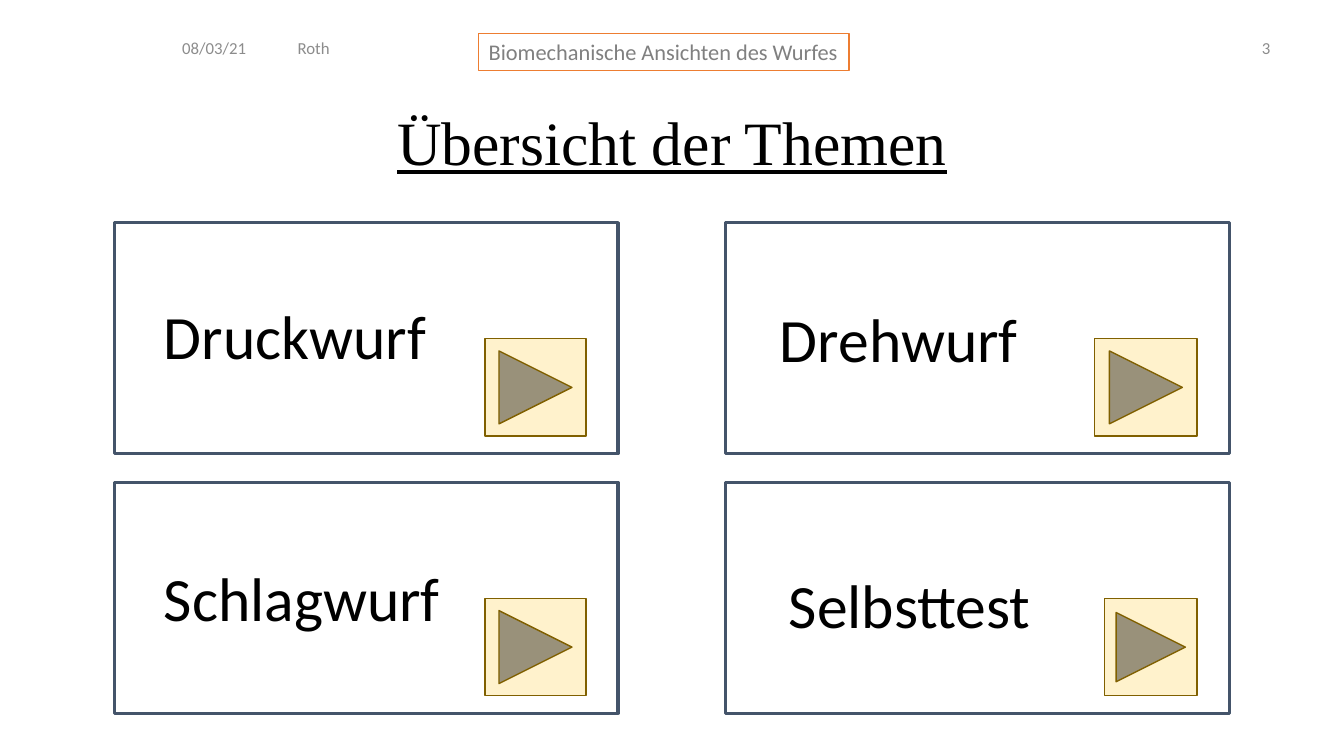
from typing import NamedTuple

from pptx import Presentation
from pptx.dml.color import RGBColor
from pptx.enum.shapes import MSO_SHAPE
from pptx.enum.text import MSO_ANCHOR, PP_ALIGN
from pptx.util import Pt


class Area(NamedTuple):
    left: float
    top: float
    width: float
    height: float


class Topic(NamedTuple):
    name: str
    column: int
    row: int
    label_left: float
    label_top: float
    button_width: float


def color(value: str) -> RGBColor:
    return RGBColor.from_string(value)


def write(box, text: str, *, size: float, ink: str = "000000", font: str = "Calibri",
          align=PP_ALIGN.LEFT, anchor=MSO_ANCHOR.TOP, underline: bool = False,
          spacing: float = 1.0) -> None:
    frame = box.text_frame
    frame.word_wrap = True
    frame.vertical_anchor = anchor
    para = frame.paragraphs[0]
    para.alignment = align
    para.line_spacing = spacing
    span = para.add_run()
    span.text = text
    span.font.size = Pt(size)
    span.font.name = font
    span.font.underline = underline
    span.font.color.rgb = color(ink)


def add_text(page, area: Area, text: str, **style) -> None:
    write(page.shapes.add_textbox(*map(Pt, area)), text, **style)


def add_box(page, kind, area: Area, line: str, weight: float, fill: str = ""):
    box = page.shapes.add_shape(kind, *map(Pt, area))
    box.shadow.inherit = False
    if fill:
        box.fill.solid()
        box.fill.fore_color.rgb = color(fill)
    else:
        box.fill.background()
    box.line.color.rgb = color(line)
    box.line.width = Pt(weight)
    return box


CARD = Area(82, 159, 359.5, 165)
COLUMN_STEP, ROW_STEP = 436.5, 185.5
BUTTON_RIGHT, BUTTON_TOP, BUTTON_HEIGHT = 336.5, 83, 69.5

TOPICS = [
    Topic("Druckwurf", 0, 0, 110, 209.5, 72),
    Topic("Drehwurf", 1, 0, 550, 211.5, 73),
    Topic("Schlagwurf", 0, 1, 110, 396.5, 72),
    Topic("Selbsttest", 1, 1, 556.5, 401.5, 66),
]


def add_topic(page, topic: Topic) -> None:
    left = CARD.left + topic.column * COLUMN_STEP
    top = CARD.top + topic.row * ROW_STEP
    add_box(page, MSO_SHAPE.RECTANGLE, Area(left, top, CARD.width, CARD.height),
            "44546A", 2.25)
    add_text(page, Area(topic.label_left, topic.label_top, 224, 60.5), topic.name, size=44)
    button = Area(left + BUTTON_RIGHT - topic.button_width, top + BUTTON_TOP,
                  topic.button_width, BUTTON_HEIGHT)
    add_box(page, MSO_SHAPE.ACTION_BUTTON_FORWARD_OR_NEXT, button, "806000", 1, "FFF2CC")


def main() -> None:
    deck = Presentation()
    deck.slide_width, deck.slide_height = Pt(960), Pt(540)
    page = deck.slides.add_slide(deck.slide_layouts[6])

    # Header line
    banner = add_box(page, MSO_SHAPE.RECTANGLE, Area(342, 24, 264.5, 26.5),
                     "ED7D31", 1, "FFFFFF")
    write(banner, "Biomechanische Ansichten des Wurfes", size=16, ink="808080")
    for text, left, width, align in [
        ("08/03/21", 123, 82.5, PP_ALIGN.LEFT),
        ("Roth", 205.5, 118.5, PP_ALIGN.LEFT),
        ("3", 698.5, 216, PP_ALIGN.RIGHT),
    ]:
        add_text(page, Area(left, 19.5, width, 29), text, size=12, ink="8C8C8C",
                 align=align, anchor=MSO_ANCHOR.MIDDLE)

    # Title
    add_text(page, Area(73.5, 66, 813.5, 75.5), "Übersicht der Themen", size=44,
             font="Times New Roman", align=PP_ALIGN.CENTER, anchor=MSO_ANCHOR.MIDDLE,
             underline=True, spacing=0.9)

    # Topic cards
    for topic in TOPICS:
        add_topic(page, topic)

    deck.save("out.pptx")


if __name__ == "__main__":
    main()
